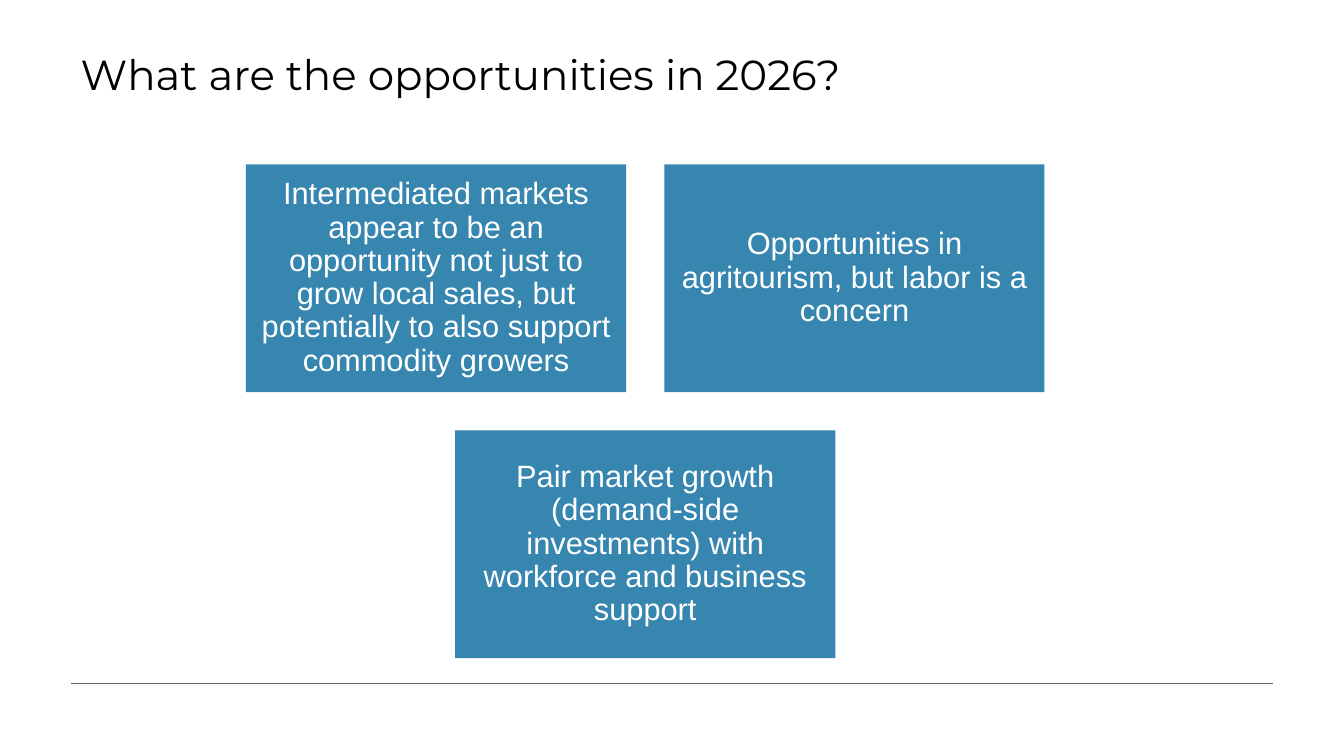
from lxml import etree
from pptx import Presentation
from pptx.dml.color import RGBColor
from pptx.enum.shapes import MSO_CONNECTOR, MSO_SHAPE
from pptx.enum.text import MSO_ANCHOR, PP_ALIGN
from pptx.oxml.ns import qn
from pptx.util import Inches, Pt

COLORS = {"title": "000000", "card": "3786AF", "card_text": "FFFFFF", "rule": "5D6469"}

OPPORTUNITIES = [
    "Intermediated markets appear to be an opportunity not just to grow local sales, "
    "but potentially to also support commodity growers",
    "Opportunities in agritourism, but labor is a concern",
    "Pair market growth (demand-side investments) with workforce and business support",
]
CARD_WIDTH, CARD_HEIGHT, CARD_GAP = 3.77, 2.26, 0.38
CARDS_PER_ROW = 2


def color(name):
    return RGBColor.from_string(COLORS[name])


def style_font(font, face, size, color_name):
    font.name = face
    font.size = Pt(size)
    font.color.rgb = color(color_name)


def set_margins(frame, left, top, right, bottom):
    frame.margin_left, frame.margin_top = Inches(left), Inches(top)
    frame.margin_right, frame.margin_bottom = Inches(right), Inches(bottom)


def add_title(slide, text, left, top, width, height):
    title = slide.shapes.title
    title.left, title.top = Inches(left), Inches(top)
    title.width, title.height = Inches(width), Inches(height)
    frame = title.text_frame
    frame.text = text
    frame.word_wrap = True
    frame.vertical_anchor = MSO_ANCHOR.TOP
    set_margins(frame, 0.02, 0.39, 0, 0)
    heading = frame.paragraphs[0]
    heading.alignment = PP_ALIGN.LEFT
    heading.line_spacing = 1.0
    style_font(heading.runs[0].font, "Montserrat", 30, "title")


def add_card(slide, text, left, top):
    card = slide.shapes.add_shape(
        MSO_SHAPE.RECTANGLE, Inches(left), Inches(top), Inches(CARD_WIDTH), Inches(CARD_HEIGHT)
    )
    card.shadow.inherit = False
    card.fill.solid()
    card.fill.fore_color.rgb = color("card")
    card.line.fill.background()
    frame = card.text_frame
    frame.text = text
    frame.word_wrap = True
    frame.vertical_anchor = MSO_ANCHOR.MIDDLE
    set_margins(frame, 0.15, 0, 0.15, 0)
    message = frame.paragraphs[0]
    message.alignment = PP_ALIGN.CENTER
    message.line_spacing = 0.9
    style_font(message.runs[0].font, "Arial", 22, "card_text")


def add_card_grid(slide, texts, left, top, width):
    """Place the cards in rows, each row centred in the given width."""
    step = CARD_WIDTH + CARD_GAP
    for start in range(0, len(texts), CARDS_PER_ROW):
        row = texts[start:start + CARDS_PER_ROW]
        row_left = left + (width - len(row) * step + CARD_GAP) / 2
        row_top = top + start // CARDS_PER_ROW * (CARD_HEIGHT + CARD_GAP)
        for column, text in enumerate(row):
            add_card(slide, text, row_left + column * step, row_top)


def add_footer_rule(slide, left, top, width):
    rule = slide.shapes.add_connector(
        MSO_CONNECTOR.STRAIGHT, Inches(left), Inches(top), Inches(left + width), Inches(top)
    )
    rule.line.color.rgb = color("rule")
    rule.line.width = Pt(0.5)
    etree.SubElement(rule._element.spPr, qn("a:effectLst"))


def main():
    deck = Presentation()
    deck.slide_width, deck.slide_height = Inches(13.33), Inches(7.5)
    slide = deck.slides.add_slide(deck.slide_layouts.get_by_name("Title Only"))
    add_footer_rule(slide, 0.7, 6.78, 11.93)
    add_title(slide, "What are the opportunities in 2026?", 0.78, 0.09, 11.78, 1.23)
    add_card_grid(slide, OPPORTUNITIES, 2.44, 1.63, 7.92)
    deck.save("out.pptx")


if __name__ == "__main__":
    main()
